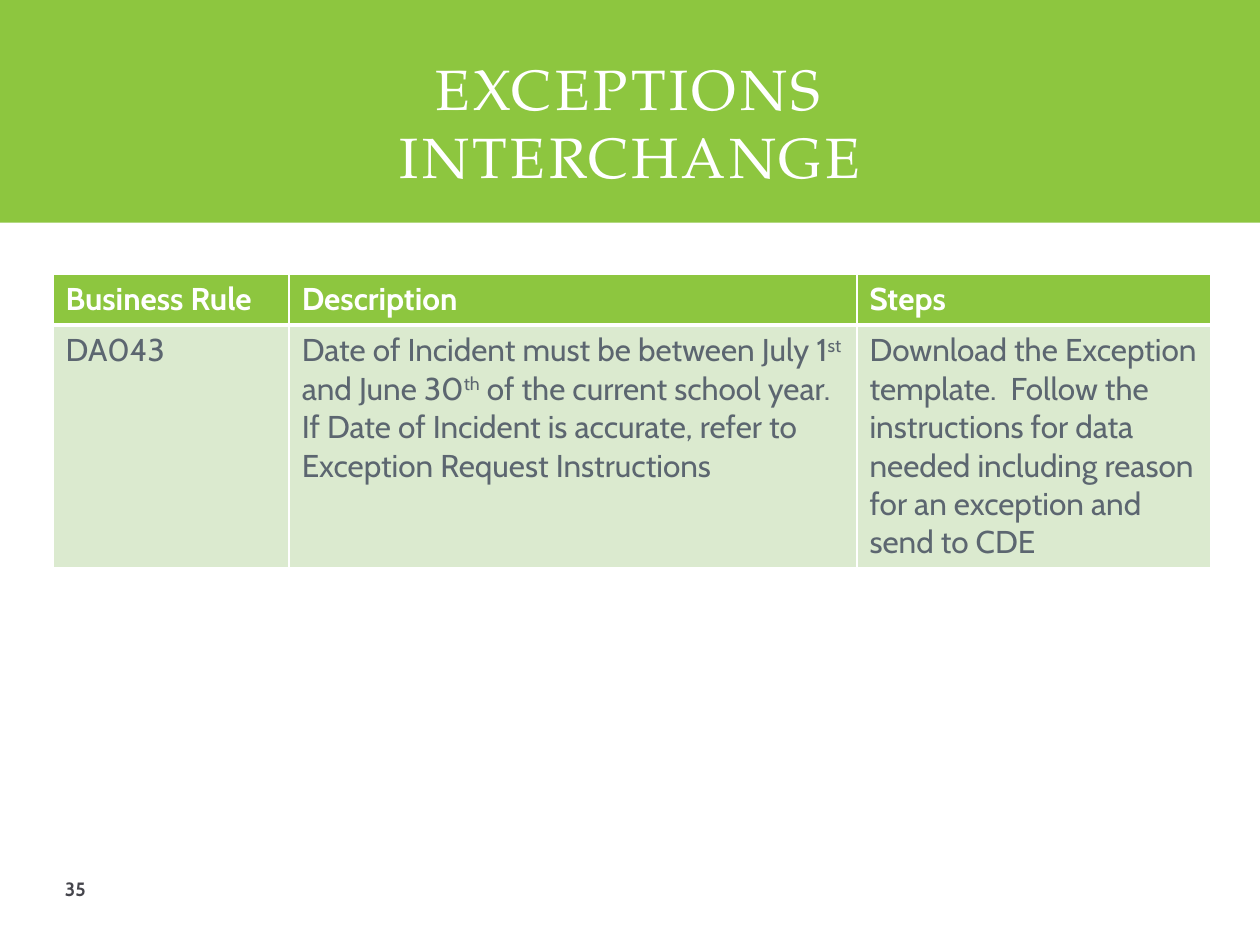
from dataclasses import dataclass

from lxml import etree
from pptx import Presentation
from pptx.dml.color import RGBColor
from pptx.enum.shapes import MSO_SHAPE
from pptx.enum.text import MSO_ANCHOR, PP_ALIGN
from pptx.oxml.ns import qn
from pptx.util import Pt

RECTANGLE = MSO_SHAPE.RECTANGLE
MIDDLE = MSO_ANCHOR.MIDDLE
CENTER, LEFT = PP_ALIGN.CENTER, PP_ALIGN.LEFT


@dataclass(frozen=True)
class Theme:
    green: str = "8DC63F"
    pale_green: str = "DBEACF"
    white: str = "FFFFFF"
    body_gray: str = "5C6670"
    number_gray: str = "45454C"
    title_font: str = "TeX Gyre Pagella"
    body_font: str = "Cabin"
    title_size: float = 32.4
    table_size: float = 18
    number_size: float = 11
    title_spacing: float = 2
    thin_border: float = 1
    header_border: float = 3


@dataclass(frozen=True)
class TextStyle:
    font: str
    size: float
    color: str
    bold: bool = False


@dataclass(frozen=True)
class CellStyle:
    text: TextStyle
    fill: str
    top_border: float
    bottom_border: float


@dataclass(frozen=True)
class Area:
    left: float
    top: float
    width: float
    height: float

    def lengths(self) -> tuple:
        return Pt(self.left), Pt(self.top), Pt(self.width), Pt(self.height)


@dataclass(frozen=True)
class Superscript:
    text: str


THEME = Theme()
TITLE = TextStyle(THEME.title_font, THEME.title_size, THEME.white)
NUMBER = TextStyle(THEME.body_font, THEME.number_size, THEME.number_gray, True)
HEADER = CellStyle(
    TextStyle(THEME.body_font, THEME.table_size, THEME.white, True),
    THEME.green, THEME.thin_border, THEME.header_border)
BODY = CellStyle(
    TextStyle(THEME.body_font, THEME.table_size, THEME.body_gray),
    THEME.pale_green, THEME.header_border, THEME.thin_border)

COLUMN_WIDTHS = (135, 324.5, 202)
ROW_HEIGHTS = (29.2, 138.6)
ROWS = (
    (HEADER, (("Business Rule",), ("Description",), ("Steps",))),
    (BODY, (
        ("DA043",),
        ("Date of Incident must be between July 1", Superscript("st"),
         " and June 30", Superscript("th"),
         " of the current school year.  If Date of Incident is accurate,"
         " refer to Exception Request Instructions"),
        ("Download the Exception template.  Follow the instructions for data"
         " needed including reason for an exception and send to CDE",),
    )),
)


def style_paragraph(para, style: TextStyle) -> None:
    font = para.font
    font.name = style.font
    font.size = Pt(style.size)
    font.bold = style.bold
    font.color.rgb = RGBColor.from_string(style.color)


def add_banner(page, area: Area) -> None:
    banner = page.shapes.add_shape(RECTANGLE, *area.lengths())
    banner.shadow.inherit = False
    banner.fill.solid()
    banner.fill.fore_color.rgb = RGBColor.from_string(THEME.green)
    banner.line.fill.background()


def add_text(page, area: Area, text: str, style: TextStyle,
             alignment=LEFT, spacing: float = 0) -> None:
    frame = page.shapes.add_textbox(*area.lengths()).text_frame
    frame.word_wrap = True
    frame.vertical_anchor = MIDDLE
    para = frame.paragraphs[0]
    para.text = text
    para.alignment = alignment
    style_paragraph(para, style)
    if spacing:
        for span in para.runs:
            span.font._element.set("spc", str(round(spacing * 100)))


def set_borders(cell, top: float, bottom: float) -> None:
    properties = cell._tc.get_or_add_tcPr()
    widths = {"a:lnL": THEME.thin_border, "a:lnR": THEME.thin_border,
              "a:lnT": top, "a:lnB": bottom}
    for position, (tag, width) in enumerate(widths.items()):
        line = etree.Element(qn(tag), w=str(Pt(width)))
        fill = etree.SubElement(line, qn("a:solidFill"))
        etree.SubElement(fill, qn("a:srgbClr"), val=THEME.white)
        properties.insert(position, line)


def fill_cell(cell, pieces: tuple, style: CellStyle) -> None:
    cell.fill.solid()
    cell.fill.fore_color.rgb = RGBColor.from_string(style.fill)
    set_borders(cell, style.top_border, style.bottom_border)
    para = cell.text_frame.paragraphs[0]
    style_paragraph(para, style.text)
    for piece in pieces:
        span = para.add_run()
        if isinstance(piece, Superscript):
            span.text = piece.text
            span.font._element.set("baseline", "30000")
        else:
            span.text = piece


def add_rules_table(page, left: float, top: float) -> None:
    area = Area(left, top, sum(COLUMN_WIDTHS), sum(ROW_HEIGHTS))
    table = page.shapes.add_table(
        len(ROWS), len(COLUMN_WIDTHS), *area.lengths()).table
    table.horz_banding = False
    for column, width in zip(table.columns, COLUMN_WIDTHS):
        column.width = Pt(width)
    for row, height, (style, contents) in zip(table.rows, ROW_HEIGHTS, ROWS):
        row.height = Pt(height)
        for cell, pieces in zip(row.cells, contents):
            fill_cell(cell, pieces, style)


def main() -> None:
    deck = Presentation()
    deck.slide_width, deck.slide_height = Pt(720), Pt(540)
    page = deck.slides.add_slide(deck.slide_layouts[6])
    add_banner(page, Area(0, 0, 720, 127.3))
    add_text(page, Area(30, 28, 660, 83), "EXCEPTIONS\vINTERCHANGE",
             TITLE, CENTER, THEME.title_spacing)
    add_text(page, Area(30, 493.5, 228, 28.75), "35", NUMBER)
    add_rules_table(page, 30.25, 156.5)
    deck.save("out.pptx")


if __name__ == "__main__":
    main()
